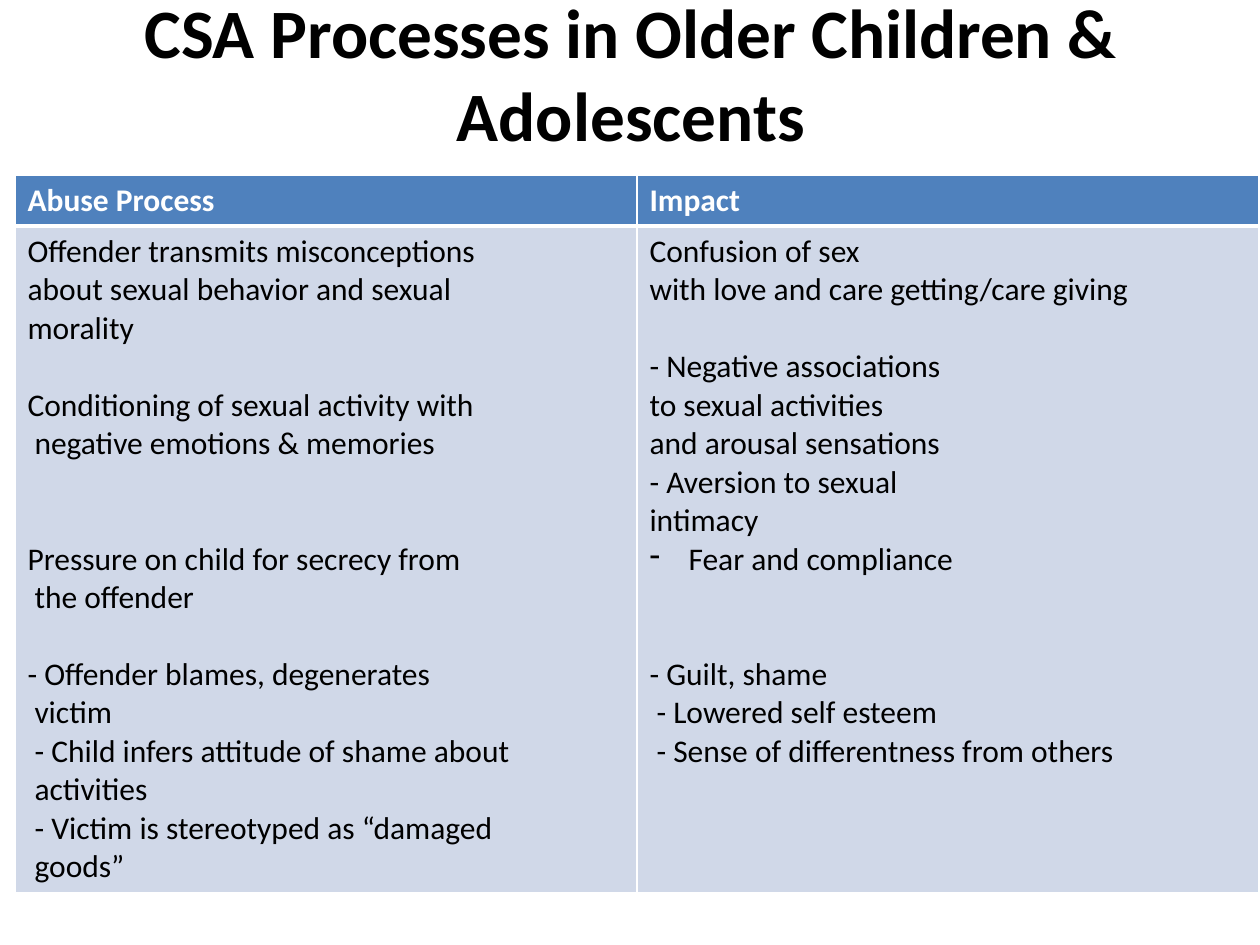
from typing import NamedTuple

from lxml.etree import SubElement
from pptx import Presentation
from pptx.dml.color import RGBColor
from pptx.enum.text import MSO_ANCHOR as Anchor, MSO_AUTO_SIZE as AutoSize, PP_ALIGN as Align
from pptx.oxml import parse_xml
from pptx.oxml.ns import nsdecls, qn
from pptx.util import Emu, Pt

BLACK = RGBColor(0, 0, 0)
WHITE = RGBColor(255, 255, 255)
BLUE = RGBColor(0x4F, 0x81, 0xBD)
PALE = RGBColor(0xD0, 0xD8, 0xE8)
LINE_PT = 22


class Line(NamedTuple):
    """A cell line with the blank lines above it, its indent and its bullet."""
    text: str
    gap: int = 0
    indent: int = 0
    bullet: str = ""


HEADERS = ["Abuse Process", "Impact"]
PROCESS = [
    Line("Offender transmits misconceptions"),
    Line("about sexual behavior and sexual"),
    Line("morality"),
    Line("Conditioning of sexual activity with", gap=1),
    Line("negative emotions & memories", indent=7),
    Line("Pressure on child for secrecy from", gap=2),
    Line("the offender", indent=7),
    Line("- Offender blames, degenerates", gap=1),
    Line("victim", indent=7),
    Line("- Child infers attitude of shame about", indent=7),
    Line("activities", indent=7),
    Line("- Victim is stereotyped as “damaged", indent=7),
    Line("goods”", indent=7),
]
IMPACT = [
    Line("Confusion of sex"),
    Line("with love and care getting/care giving"),
    Line("- Negative associations", gap=1),
    Line("to sexual activities"),
    Line("and arousal sensations"),
    Line("- Aversion to sexual"),
    Line("intimacy"),
    Line("Fear and compliance", indent=39, bullet="-"),
    Line("- Guilt, shame", gap=2),
    Line("- Lowered self esteem", indent=7),
    Line("- Sense of differentness from others", indent=7),
]


def px(n):
    """Turn pixels at 126 to the inch into EMU."""
    return Emu(round(n * 914400 / 126))


class Deck:
    """Holds the style and the current slide."""

    def __init__(self, width, height, font="Calibri"):
        """Start a presentation with one title-only slide."""
        self.prs = Presentation()
        self.prs.slide_width, self.prs.slide_height = px(width), px(height)
        self.font = font
        self.s = self.prs.slides.add_slide(self.prs.slide_layouts[5])

    def style(self, p, size, color, bold):
        """Format every run of a paragraph."""
        for r in p.runs:
            for key, value in dict(name=self.font, size=Pt(size), bold=bold).items():
                setattr(r.font, key, value)
            r.font.color.rgb = color

    def title(self, text, left, top, width, height):
        """Place and format the title placeholder."""
        sp = self.s.shapes.title
        box = dict(left=left, top=top, width=width, height=height)
        for key, value in box.items():
            setattr(sp, key, px(value))
        tf = sp.text_frame
        tf.text = text
        frame = dict(word_wrap=True, auto_size=AutoSize.NONE, vertical_anchor=Anchor.MIDDLE)
        for key, value in frame.items():
            setattr(tf, key, value)
        p = tf.paragraphs[0]
        p.alignment = Align.CENTER
        self.style(p, 39.6, BLACK, True)

    def borders(self, cell, **widths):
        """Draw white cell borders of the given point widths."""
        tc_pr = cell._tc.get_or_add_tcPr()
        for i, (side, width) in enumerate(widths.items()):
            tc_pr.insert(i, parse_xml(
                f'<a:ln{side} {nsdecls("a")} w="{Pt(width)}"><a:solidFill>'
                f'<a:srgbClr val="{WHITE}"/></a:solidFill></a:ln{side}>'))

    def cell(self, cell, lines, fill, color, bold):
        """Fill a cell with one paragraph per line."""
        cell.fill.solid()
        cell.fill.fore_color.rgb = fill
        tf = cell.text_frame
        tf.text = "\n".join(line.text for line in lines)
        for p, line in zip(tf.paragraphs, lines):
            self.style(p, 18, color, bold)
            if line.gap:
                p.space_before = Pt(line.gap * LINE_PT)
            p_pr = p._p.get_or_add_pPr()
            if line.indent:
                p_pr.set("marL", str(px(line.indent)))
            if line.bullet:
                p_pr.set("indent", str(-px(line.indent)))
                SubElement(p_pr, qn("a:buChar"), char=line.bullet)

    def table(self, headers, columns, left, top, col_width, row_heights):
        """Add a table with a header row and one body row."""
        width, height = col_width * len(headers), sum(row_heights)
        frame = self.s.shapes.add_table(2, len(headers), px(left), px(top), px(width), px(height))
        table = frame.table
        table.horz_banding = False
        for row, row_height in zip(table.rows, row_heights):
            row.height = px(row_height)
        for i, (header, lines) in enumerate(zip(headers, columns)):
            table.columns[i].width = px(col_width)
            head, body = table.cell(0, i), table.cell(1, i)
            self.cell(head, [Line(header)], BLUE, WHITE, True)
            self.cell(body, lines, PALE, BLACK, False)
            self.borders(head, L=1, R=1, T=1, B=3)
            self.borders(body, L=1, R=1, T=3, B=1)


def main():
    """Build the slide and save it."""
    deck = Deck(1260, 945)
    deck.title("CSA Processes in Older Children & Adolescents", 64, 0, 1134, 145)
    deck.table(HEADERS, [PROCESS, IMPACT], 15, 175, 622, [51, 655])
    deck.prs.save("out.pptx")


if __name__ == "__main__":
    main()
